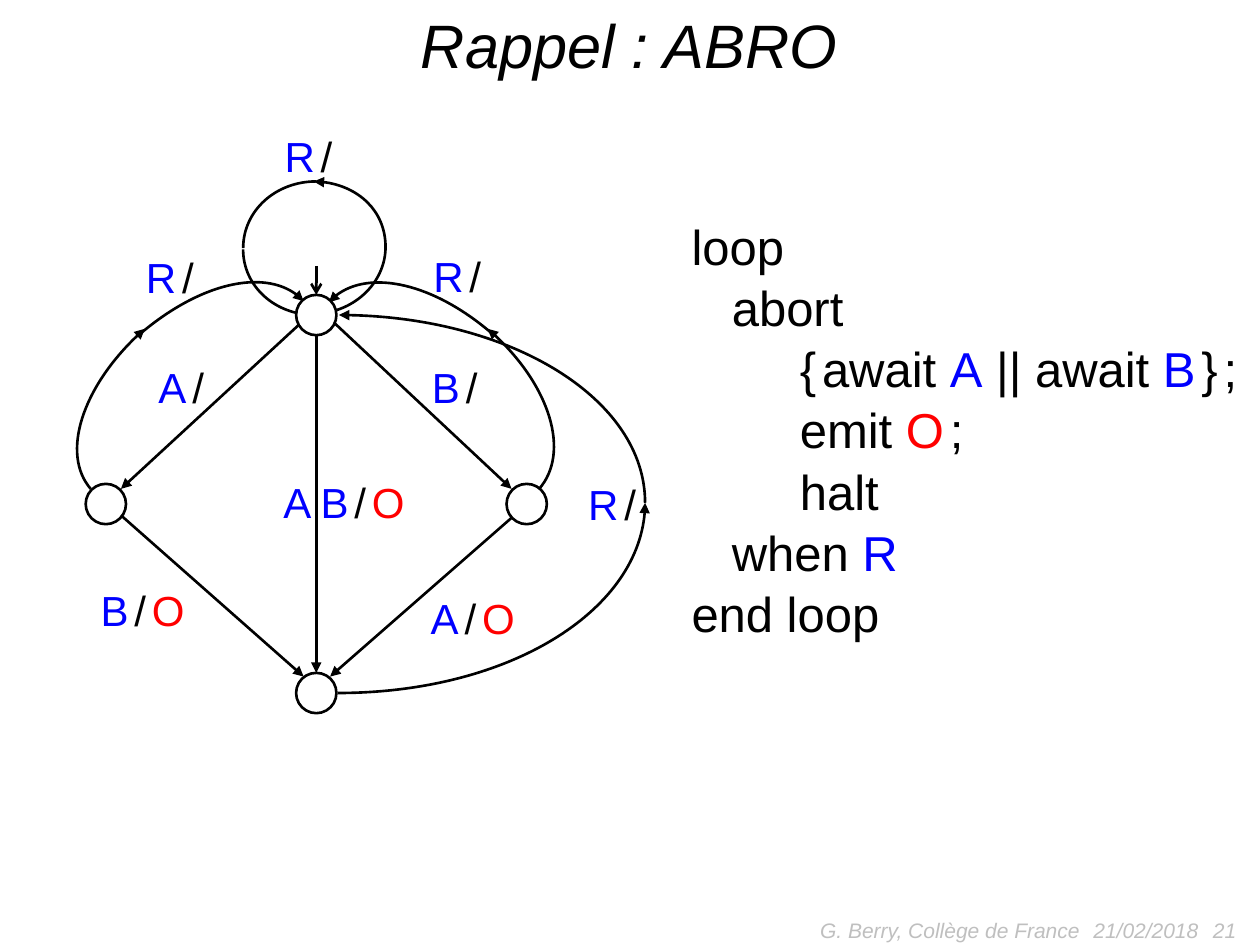
from dataclasses import dataclass

from lxml import etree
from pptx import Presentation
from pptx.dml.color import RGBColor
from pptx.enum.shapes import MSO_CONNECTOR, MSO_SHAPE
from pptx.enum.text import MSO_ANCHOR, PP_ALIGN
from pptx.oxml.ns import qn
from pptx.util import Inches, Pt

STRAIGHT = MSO_CONNECTOR.STRAIGHT
OVAL = MSO_SHAPE.OVAL
TOP, MIDDLE, BOTTOM = MSO_ANCHOR.TOP, MSO_ANCHOR.MIDDLE, MSO_ANCHOR.BOTTOM
LEFT, CENTER, RIGHT = PP_ALIGN.LEFT, PP_ALIGN.CENTER, PP_ALIGN.RIGHT
TOP_SITE = 0


@dataclass(frozen=True)
class Theme:
    font: str = "Arial"
    ink: str = "000000"
    paper: str = "FFFFFF"
    signal: str = "0000FF"
    output: str = "FF0000"
    muted: str = "BFBFBF"
    title: int = 35
    code: int = 28
    label: int = 24
    small: int = 12
    line: float = 1.5


THEME = Theme()
NODE_SIZE = 0.32
NODES = {"start": (2.35, 2.34), "after_a": (0.68, 3.84),
         "after_b": (4.02, 3.84), "done": (2.35, 5.34)}
EDGES = [
    ((2.37, 2.58), (0.96, 3.88)),
    ((2.65, 2.56), (4.06, 3.88)),
    ((4.06, 4.11), (2.62, 5.37)),
    ((0.96, 4.09), (2.41, 5.37)),
]
RESET_CURVES = [
    ([(3.06, 1.96), (3.06, 1.67), (2.8, 1.44), (2.49, 1.44)], True),
    ([(1.93, 1.97), (1.93, 1.67), (2.19, 1.44), (2.51, 1.44)], False),
    ([(3.06, 1.96), (3.06, 2.25), (2.8, 2.49), (2.49, 2.49)], False),
    ([(2.5, 2.5), (2.18, 2.5), (1.93, 2.27), (1.93, 1.98)], False),
    ([(0.72, 3.88), (0.48, 3.6), (0.67, 3.03), (1.15, 2.61)], True),
    ([(1.1, 2.66), (1.59, 2.24), (2.17, 2.12), (2.41, 2.39)], True),
    ([(4.28, 3.88), (4.53, 3.59), (4.35, 3.02), (3.87, 2.61)], True),
    ([(3.92, 2.66), (3.44, 2.24), (2.85, 2.12), (2.61, 2.4)], True),
    ([(2.68, 5.5), (4.03, 5.5), (5.12, 4.82), (5.12, 3.99)], True),
    ([(5.12, 3.99), (5.12, 3.17), (4.03, 2.5), (2.69, 2.5)], True),
]
LABELS = [
    ("A", "", 1.16, 2.82, 0.56),
    ("B", "", 3.33, 2.82, 0.56),
    ("A", "O", 3.32, 4.65, 0.87),
    ("B", "O", 0.7, 4.59, 0.89),
    ("A B", "O", 2.15, 3.73, 1.26),
    ("R", "", 2.16, 0.99, 0.58),
    ("R", "", 1.06, 1.95, 0.58),
    ("R", "", 3.34, 1.94, 0.58),
    ("R", "", 4.57, 3.75, 0.58),
]
GAP = (" ", THEME.ink, THEME.small)
CODE = [
    (0, ["loop"]),
    (0.32, ["abort"]),
    (0.86, ["{", GAP, "await ", ("A", THEME.signal), " || await ",
            ("B", THEME.signal), GAP, "}", GAP, ";"]),
    (0.86, ["emit ", ("O", THEME.output), GAP, ";"]),
    (0.86, ["halt"]),
    (0.32, ["when ", ("R", THEME.signal)]),
    (0, ["end loop"]),
]


def fill_paragraph(para, spans, size, color=THEME.ink, italic=False, align=LEFT):
    para.alignment = align
    for item in spans:
        text, *style = (item,) if isinstance(item, str) else item
        span = para.add_run()
        span.text = text
        font = span.font
        font.name = THEME.font
        font.italic = italic
        font.color.rgb = RGBColor.from_string(style[0] if style else color)
        font.size = Pt(style[1] if len(style) > 1 else size)


def add_text(page, lines, left, top, width, height, anchor=TOP, wrap=True,
             spacing=1.0, **style):
    box = page.shapes.add_textbox(Inches(left), Inches(top), Inches(width), Inches(height))
    frame = box.text_frame
    frame.word_wrap = wrap
    frame.vertical_anchor = anchor
    for index, (indent, spans) in enumerate(lines):
        para = frame.paragraphs[0] if index == 0 else frame.add_paragraph()
        fill_paragraph(para, spans, **style)
        para.line_spacing = spacing
        if indent:
            para._p.get_or_add_pPr().set("marL", str(Inches(indent)))


def add_label(page, signals, output, left, top, width):
    spans = [(signals, THEME.signal), GAP, "/"]
    if output:
        spans += [GAP, (output, THEME.output)]
    add_text(page, [(0, spans)], left, top, width, 0.5, wrap=width > 1, size=THEME.label)


def style_line(line, arrow=None):
    line.color.rgb = RGBColor.from_string(THEME.ink)
    line.width = Pt(THEME.line)
    if arrow:
        etree.SubElement(line._get_or_add_ln(), qn("a:tailEnd"), type=arrow)


def add_node(page, left, top):
    node = page.shapes.add_shape(OVAL, Inches(left), Inches(top),
                                 Inches(NODE_SIZE), Inches(NODE_SIZE))
    node.shadow.inherit = False
    node.fill.solid()
    node.fill.fore_color.rgb = RGBColor.from_string(THEME.paper)
    style_line(node.line)
    return node


def add_arrow(page, start, end, target=None, arrow="triangle"):
    points = [Inches(value) for value in (*start, *end)]
    connector = page.shapes.add_connector(STRAIGHT, *points)
    if target is not None:
        connector.end_connect(target, TOP_SITE)
    style_line(connector.line, arrow)
    etree.SubElement(connector._element.spPr, qn("a:effectLst"))


def add_curve(page, points, has_arrow):
    start, *rest = [(Inches(x), Inches(y)) for x, y in points]
    builder = page.shapes.build_freeform(*start)
    builder.add_line_segments(rest, close=False)
    curve = builder.convert_to_shape()
    curve.shadow.inherit = False
    curve.fill.background()
    style_line(curve.line, "triangle" if has_arrow else None)
    outline = curve._element.spPr.find(".//" + qn("a:path"))
    segments = outline.findall(qn("a:lnTo"))
    bezier = etree.SubElement(outline, qn("a:cubicBezTo"))
    for segment in segments:
        bezier.append(segment[0])
        outline.remove(segment)


def add_automaton(page):
    for points, has_arrow in RESET_CURVES:
        add_curve(page, points, has_arrow)
    nodes = {name: add_node(page, *place) for name, place in NODES.items()}
    for start, end in EDGES:
        add_arrow(page, start, end)
    add_arrow(page, (2.51, 2.66), (2.51, 5.34), target=nodes["done"])
    add_arrow(page, (2.51, 2.11), (2.51, 2.34), target=nodes["start"], arrow="arrow")
    for label in LABELS:
        add_label(page, *label)


def add_footer(page):
    for text, left, width, align in [("21/02/2018", 8.58, 2.33, LEFT),
                                     ("21", 7.58, 2.33, RIGHT),
                                     ("G. Berry, Collège de France", 5.5, 3.17, RIGHT)]:
        add_text(page, [(0, [text])], left, 7.18, width, 0.4, anchor=MIDDLE,
                 size=THEME.small, color=THEME.muted, italic=True, align=align)


def main():
    deck = Presentation()
    deck.slide_width, deck.slide_height = Inches(10), Inches(7.5)
    page = deck.slides.add_slide(deck.slide_layouts[6])
    add_footer(page)
    add_text(page, [(0, ["Rappel : ABRO"])], 0.12, 0, 9.75, 0.69, anchor=BOTTOM,
             size=THEME.title, italic=True, align=CENTER)
    add_text(page, CODE, 5.39, 1.65, 4.66, 3.4, spacing=1.04, size=THEME.code)
    add_automaton(page)
    deck.save("out.pptx")


if __name__ == "__main__":
    main()
